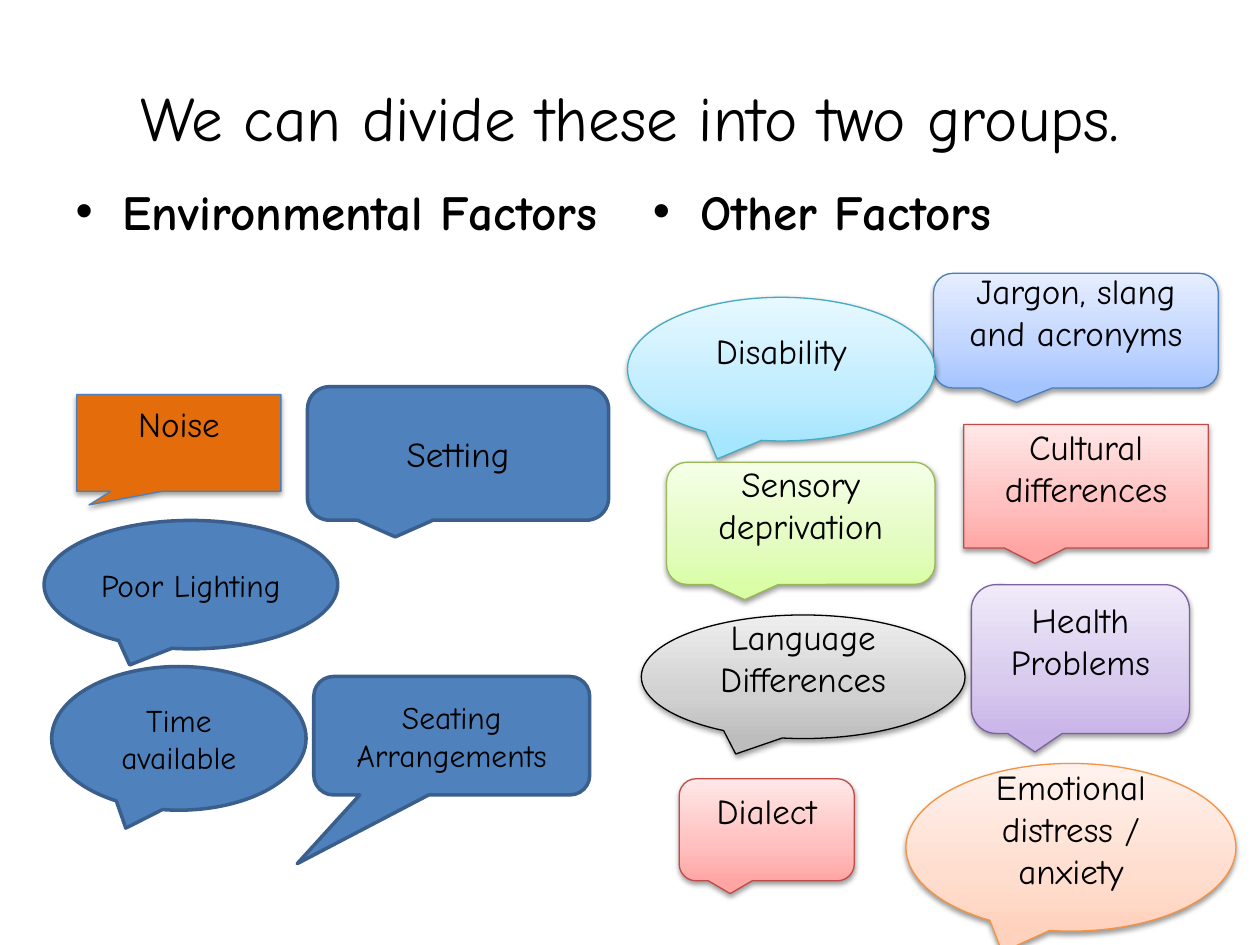
from copy import deepcopy
from dataclasses import dataclass

from lxml import etree
from pptx import Presentation
from pptx.dml.color import RGBColor
from pptx.enum.shapes import MSO_SHAPE
from pptx.enum.text import MSO_ANCHOR, PP_ALIGN
from pptx.oxml.ns import qn
from pptx.util import Pt

ROUNDED = MSO_SHAPE.ROUNDED_RECTANGULAR_CALLOUT
ELLIPSE = MSO_SHAPE.OVAL_CALLOUT
SQUARE = MSO_SHAPE.RECTANGULAR_CALLOUT
MIDDLE = MSO_ANCHOR.MIDDLE
CENTER = PP_ALIGN.CENTER
TWO_CONTENT = 3


@dataclass(frozen=True)
class Look:
    fills: tuple
    line: str
    width: float = 0.75
    raised: bool = True


@dataclass(frozen=True)
class Theme:
    font: str = "Comic Neue"
    ink: str = "000000"
    title: int = 36
    heading: int = 28
    label: int = 20
    small: int = 18
    inset: float = 3.6
    lift: float = 21.6
    stops: tuple = (0, 0.35, 1)
    blue: Look = Look(("A4C4FF", "BFD4FF", "E6EEFF"), "4B7EBC")
    aqua: Look = Look(("A7E6FF", "C1EDFF", "E7F8FF"), "46AAC5")
    green: Look = Look(("DAFDA7", "E4FCC2", "F5FFE7"), "98B955")
    purple: Look = Look(("C9B5E8", "D8CBEE", "F0EAF9"), "7D60A0")
    gray: Look = Look(("BDBDBD", "D1D1D1", "EEEEEE"), "000000")
    red: Look = Look(("FFA6A5", "FFC0BF", "FFE7E7"), "BF4C48")
    peach: Look = Look(("FFD2BD", "FFDED0", "FFF2ED"), "F69240")
    orange: Look = Look(("E46C0A",), "4B7EBC")
    plain: Look = Look(("4F81BD",), "3A5F8C", 2, False)


class SlideBuilder:
    """Draws styled headings and callouts on one slide."""

    def __init__(self, slide, theme):
        self.slide = slide
        self.theme = theme

    def set_text(self, frame, text, size, bold=False):
        frame.word_wrap = True
        frame.text = text
        para = frame.paragraphs[0]
        para.font.name = self.theme.font
        para.font.size = Pt(size)
        para.font.bold = bold
        para.font.color.rgb = RGBColor.from_string(self.theme.ink)
        return para

    def placeholder(self, index, text, size, bounds, bold=False):
        box = self.slide.placeholders[index]
        box.left, box.top, box.width, box.height = map(Pt, bounds)
        self.set_text(box.text_frame, text, size, bold)

    def paint(self, box, colors):
        if len(colors) == 1:
            box.fill.solid()
            box.fill.fore_color.rgb = RGBColor.from_string(colors[0])
            return
        box.fill.gradient()
        box.fill.gradient_angle = 90
        stop_list = box.element.spPr.find(".//" + qn("a:gsLst"))
        stop_list.insert(1, deepcopy(stop_list[0]))
        for stop, color, position in zip(box.fill.gradient_stops, colors, self.theme.stops):
            stop.color.rgb = RGBColor.from_string(color)
            stop.position = position

    def raise_shadow(self, box):
        effects = box.element.spPr.find(qn("a:effectLst"))
        shadow = etree.SubElement(effects, qn("a:outerShdw"), blurRad=str(Pt(3.1)),
                                  dist=str(Pt(1.6)), dir="5400000", rotWithShape="0")
        color = etree.SubElement(shadow, qn("a:srgbClr"), val=self.theme.ink)
        etree.SubElement(color, qn("a:alpha"), val="38000")

    def callout(self, text, kind, look, bounds, size, tail=()):
        box = self.slide.shapes.add_shape(kind, *map(Pt, bounds))
        for index, value in enumerate(tail):
            box.adjustments[index] = value
        self.paint(box, look.fills)
        box.line.color.rgb = RGBColor.from_string(look.line)
        box.line.width = Pt(look.width)
        box.shadow.inherit = False
        frame = box.text_frame
        frame.vertical_anchor = MIDDLE
        frame.margin_top = frame.margin_bottom = Pt(self.theme.inset)
        if look.raised:
            self.raise_shadow(box)
            frame.margin_bottom = Pt(self.theme.inset + self.theme.lift)
        self.set_text(frame, text, size).alignment = CENTER


def main():
    theme = Theme()
    deck = Presentation()
    deck.slide_width, deck.slide_height = Pt(720), Pt(540)
    page = SlideBuilder(deck.slides.add_slide(deck.slide_layouts[TWO_CONTENT]), theme)

    page.placeholder(0, "We can divide these into two groups.", theme.title, (36, 21.6, 648, 90))
    page.placeholder(1, "Environmental Factors", theme.heading, (36, 100.1, 318.2, 382.3), True)
    page.placeholder(2, "Other Factors", theme.heading, (365.8, 100.1, 318.2, 419.8), True)

    other_factors = (
        ("Jargon, slang and acronyms", ROUNDED, theme.blue, (533.5, 156.2, 162.7, 65.5)),
        ("Disability", ELLIPSE, theme.aqua, (358.6, 169.9, 175.7, 82.1)),
        ("Sensory deprivation", ROUNDED, theme.green, (380.9, 264.2, 153.4, 69.8)),
        ("Health Problems", ROUNDED, theme.purple, (555.1, 334.1, 124.6, 85)),
        ("Language Differences", ELLIPSE, theme.gray, (366.5, 351.4, 185, 70.6)),
        ("Cultural differences", SQUARE, theme.red, (550.8, 242.6, 139.7, 70.6)),
        ("Dialect", ROUNDED, theme.red, (388.1, 445, 100.1, 58.3)),
        ("Emotional distress / anxiety", ELLIPSE, theme.peach, (517.7, 436.3, 188.6, 95.8)),
    )
    for text, kind, look, bounds in other_factors:
        page.callout(text, kind, look, bounds, theme.label)

    page.callout("Noise", SQUARE, theme.orange, (43.9, 225.4, 116.6, 55.4), theme.label,
                 (-0.44, 0.64))
    page.callout("Poor Lighting", ELLIPSE, theme.plain, (25.2, 297.4, 167.8, 73.4), theme.small)
    page.callout("Seating Arrangements", ROUNDED, theme.plain, (179.3, 386.6, 157.7, 67.7),
                 theme.small, (-0.56, 1.08))
    page.callout("Time available", ELLIPSE, theme.plain, (29.5, 380.9, 145.4, 82.1), theme.small)
    page.callout("Setting", ROUNDED, theme.plain, (175.7, 221, 172.1, 76.3), theme.label)

    deck.save("out.pptx")


if __name__ == "__main__":
    main()
